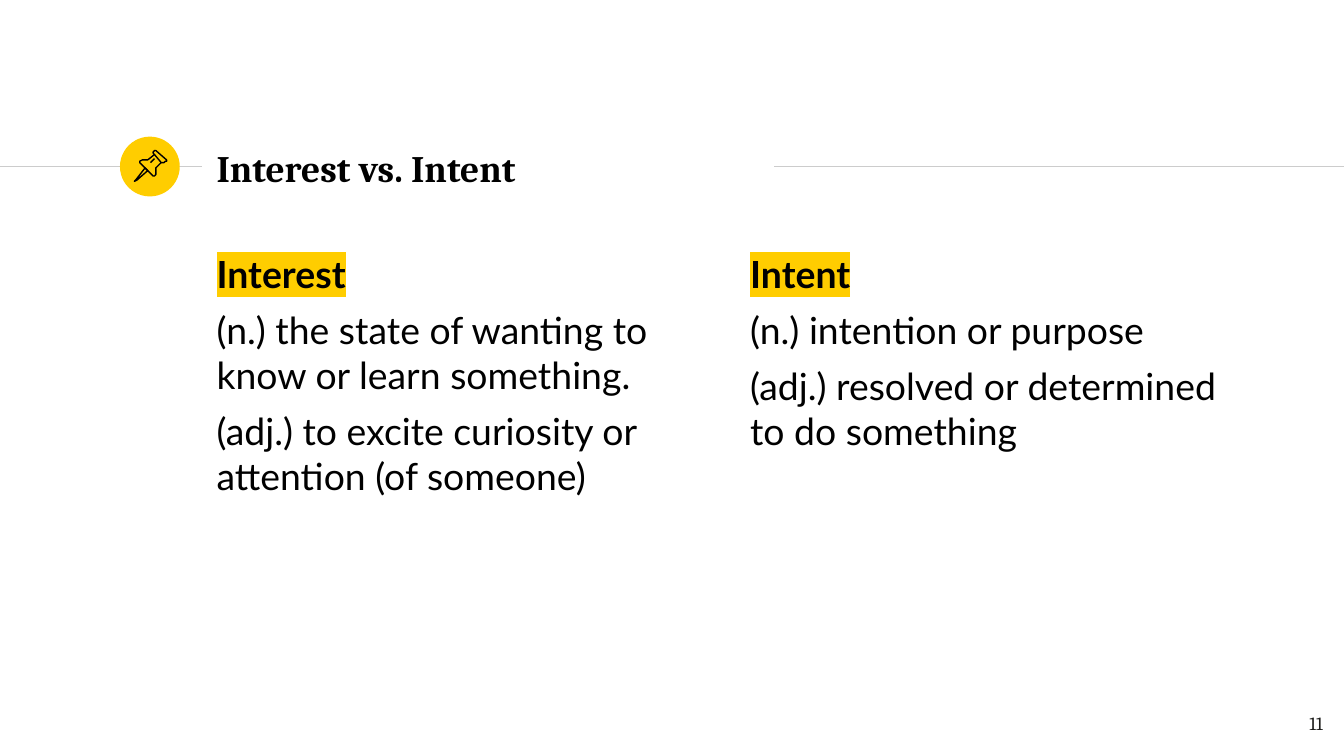
from lxml.etree import SubElement
from pptx import Presentation
from pptx.dml.color import RGBColor
from pptx.enum.shapes import MSO_CONNECTOR, MSO_SHAPE
from pptx.enum.text import MSO_ANCHOR, PP_ALIGN
from pptx.oxml.ns import qn
from pptx.util import Inches, Pt

YELLOW = RGBColor(0xFF, 0xCD, 0x00)
BLACK = RGBColor(0x00, 0x00, 0x00)
INK = RGBColor(0x1D, 0x1D, 0x1B)
GRAY = RGBColor(0xCC, 0xCC, 0xCC)

deck = Presentation()
deck.slide_width = Inches(10)
deck.slide_height = deck.slide_width * 9 // 16
page = deck.slides.add_slide(deck.slide_layouts[6])
COLUMN = ROW = deck.slide_width / 100


def place(left, top, width, height):
    return [round(size) for size in (left * COLUMN, top * ROW, width * COLUMN, height * ROW)]


def write(frame, text, font="Lato", size=20, color=BLACK, bold=False,
          highlight=None, align=PP_ALIGN.LEFT, before=0):
    para = frame.paragraphs[0] if not frame.text else frame.add_paragraph()
    para.alignment = align
    para.space_before = Pt(before)
    span = para.add_run()
    span.text = text
    span.font.name = font
    span.font.size = Pt(size)
    span.font.bold = bold
    span.font.color.rgb = color
    if highlight:
        properties = span.font._element
        mark = SubElement(properties, qn("a:highlight"))
        SubElement(mark, qn("a:srgbClr")).set("val", str(highlight))
        properties.find(qn("a:solidFill")).addnext(mark)


for start, end in [(0, 15), (57.6, 100)]:
    left, top, right, bottom = place(start, 12.4, end, 12.4)
    rule = page.shapes.add_connector(MSO_CONNECTOR.STRAIGHT, left, top, right, bottom)
    rule.line.color.rgb = GRAY
    rule.line.width = Pt(0.75)
    SubElement(rule._element.spPr, qn("a:effectLst"))

badge = page.shapes.add_shape(MSO_SHAPE.OVAL, *place(8.93, 10.17, 4.45, 4.45))
badge.shadow.inherit = False
badge.fill.solid()
badge.fill.fore_color.rgb = YELLOW
badge.line.fill.background()

pin_needle = [(108, 125), (101, 134), (100, 135), (102, 134), (110, 127)]
pin_cap = [(115, 115), (120, 121), (122, 121), (123, 120), (124, 120), (124, 119),
           (116, 112), (115, 112), (114, 113), (114, 114)]
pin_body = [(115, 115), (110, 119), (108, 119), (106, 119), (104, 120), (104, 121),
            (114, 131), (115, 131), (116, 130), (116, 128), (116, 125), (120, 121)]
pin_glint = [(112, 121), (115, 118)]
for points, closed in [(pin_needle, True), (pin_cap, True), (pin_body, False), (pin_glint, False)]:
    builder = page.shapes.build_freeform(*points[0], scale=COLUMN / 10)
    builder.add_line_segments(points[1:], close=closed)
    stroke = builder.convert_to_shape()
    stroke.shadow.inherit = False
    stroke.fill.background()
    stroke.line.color.rgb = BLACK
    stroke.line.width = Pt(0.75)

definitions = [
    ("Interest", "(n.) the state of wanting to know or learn something.",
     "(adj.) to excite curiosity or attention (of someone)"),
    ("Intent", "(n.) intention or purpose",
     "(adj.) resolved or determined to do something"),
]
title_box = page.shapes.add_textbox(*place(15.13, 10.1, 42.4, 4.8))
number_box = page.shapes.add_textbox(*place(93.4, 52.1, 6, 4.1))
word_boxes = [page.shapes.add_textbox(*place(15.13 + 39.7 * index, 17.7, 37.5, 35.3))
              for index in range(len(definitions))]
for box in [title_box, number_box, *word_boxes]:
    frame = box.text_frame
    frame.word_wrap = True
    frame.margin_left = frame.margin_right = Inches(0.1)
    frame.margin_top = frame.margin_bottom = Inches(0.1)

title_box.text_frame.vertical_anchor = MSO_ANCHOR.MIDDLE
write(title_box.text_frame, "Interest vs. Intent", font="Cambria", bold=True)
write(number_box.text_frame, "11", font="Cambria", size=10, color=INK, align=PP_ALIGN.RIGHT)
for box, (word, *meanings) in zip(word_boxes, definitions):
    write(box.text_frame, word, bold=True, highlight=YELLOW)
    for meaning in meanings:
        write(box.text_frame, meaning, before=6)

deck.save("out.pptx")
